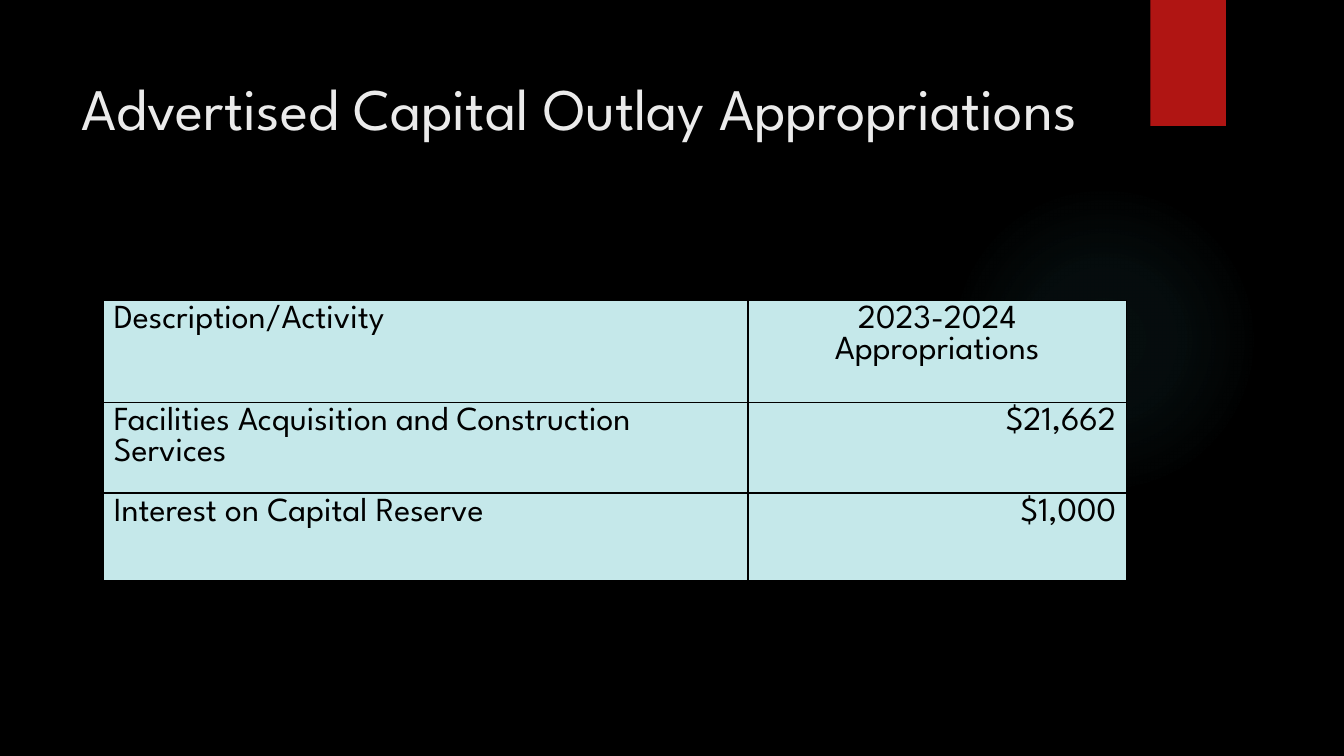
import pptx
import pptx.util
import pptx.dml.color
import pptx.enum.shapes
import pptx.enum.text
import pptx.oxml
import pptx.oxml.ns

FONT = "League Spartan"
WIDTH, HEIGHT = 13.33, 7.5
ALIGN = pptx.enum.text.PP_ALIGN
SHAPES = pptx.enum.shapes.MSO_SHAPE
NAMESPACE = pptx.oxml.ns.nsdecls("a")

ROWS = [
    ("Description/Activity", "2023-2024 Appropriations"),
    ("Facilities Acquisition and Construction Services", "$21,662"),
    ("Interest on Capital Reserve", "$1,000"),
]
COLUMN_SHARES = (0.63, 0.37)
ROW_HEIGHTS = (1.01, 0.56, 0.87)


def color(value):
    return pptx.dml.color.RGBColor.from_string(value)


def inches(*lengths):
    return [pptx.util.Inches(length) for length in lengths]


def add_span(para, text, size, shade):
    span = para.add_run()
    span.text = text
    span.font.name = FONT
    span.font.size = pptx.util.Pt(size)
    span.font.color.rgb = color(shade)


def add_plain_shape(page, kind, box, shade):
    shape = page.shapes.add_shape(kind, *inches(*box))
    shape.shadow.inherit = False
    shape.fill.solid()
    shape.fill.fore_color.rgb = color(shade)
    shape.line.fill.background()
    return shape


def add_backdrop(page):
    page.background.fill.solid()
    page.background.fill.fore_color.rgb = color("000000")

    # Faint round glow, fading outwards
    glow = add_plain_shape(page, SHAPES.OVAL, (9.41, 1.83, 3.08, 3.08), "50B9C1")
    stops = "".join(
        f'<a:gs pos="{place * 1000}"><a:srgbClr val="50B9C1">'
        f'<a:alpha val="{alpha * 1000}"/></a:srgbClr></a:gs>'
        for place, alpha in ((0, 7), (36, 6), (69, 0))
    )
    gradient = pptx.oxml.parse_xml(
        f'<a:gradFill {NAMESPACE}><a:gsLst>{stops}</a:gsLst><a:path path="circle">'
        '<a:fillToRect l="50000" t="50000" r="50000" b="50000"/></a:path></a:gradFill>'
    )
    properties = glow._element.spPr
    solid = properties.find(pptx.oxml.ns.qn("a:solidFill"))
    properties.replace(solid, gradient)

    # Red tab hanging from the top edge
    add_plain_shape(page, SHAPES.RECTANGLE, (11.41, 0, 0.75, HEIGHT / 6), "B01513")


def add_title(page, box, text):
    frame = page.shapes.add_textbox(*inches(*box)).text_frame
    frame.word_wrap = True
    frame.margin_top = pptx.util.Inches(0.21)
    add_span(frame.paragraphs[0], text, 42, "EBEBEB")


def add_borders(cell):
    properties = cell._tc.get_or_add_tcPr()
    for place, side in enumerate(("lnL", "lnR", "lnT", "lnB")):
        properties.insert(place, pptx.oxml.parse_xml(
            f'<a:{side} {NAMESPACE} w="12700"><a:solidFill>'
            f'<a:srgbClr val="000000"/></a:solidFill></a:{side}>'
        ))


def add_appropriations(page, left, top, width):
    frame = page.shapes.add_table(
        len(ROWS), len(COLUMN_SHARES), *inches(left, top, width, sum(ROW_HEIGHTS))
    )
    table = frame.table
    table.first_row = table.horz_banding = False
    for column, share in zip(table.columns, COLUMN_SHARES):
        column.width = pptx.util.Inches(width * share)
    for row, height in zip(table.rows, ROW_HEIGHTS):
        row.height = pptx.util.Inches(height)

    for row_index, texts in enumerate(ROWS):
        amount_align = ALIGN.RIGHT if row_index else ALIGN.CENTER
        for column_index, text in enumerate(texts):
            cell = table.cell(row_index, column_index)
            cell.fill.solid()
            cell.fill.fore_color.rgb = color("C5E8EA")
            add_borders(cell)
            para = cell.text_frame.paragraphs[0]
            para.alignment = amount_align if column_index else ALIGN.LEFT
            add_span(para, text, 24, "000000")


def main():
    deck = pptx.Presentation()
    deck.slide_width, deck.slide_height = inches(WIDTH, HEIGHT)
    page = deck.slides.add_slide(deck.slide_layouts[6])
    add_backdrop(page)
    add_title(page, (0.71, 0.5, 10.29, 1.53), "Advertised Capital Outlay Appropriations")
    add_appropriations(page, 1.03, 2.98, 10.14)
    deck.save("out.pptx")


if __name__ == "__main__":
    main()
